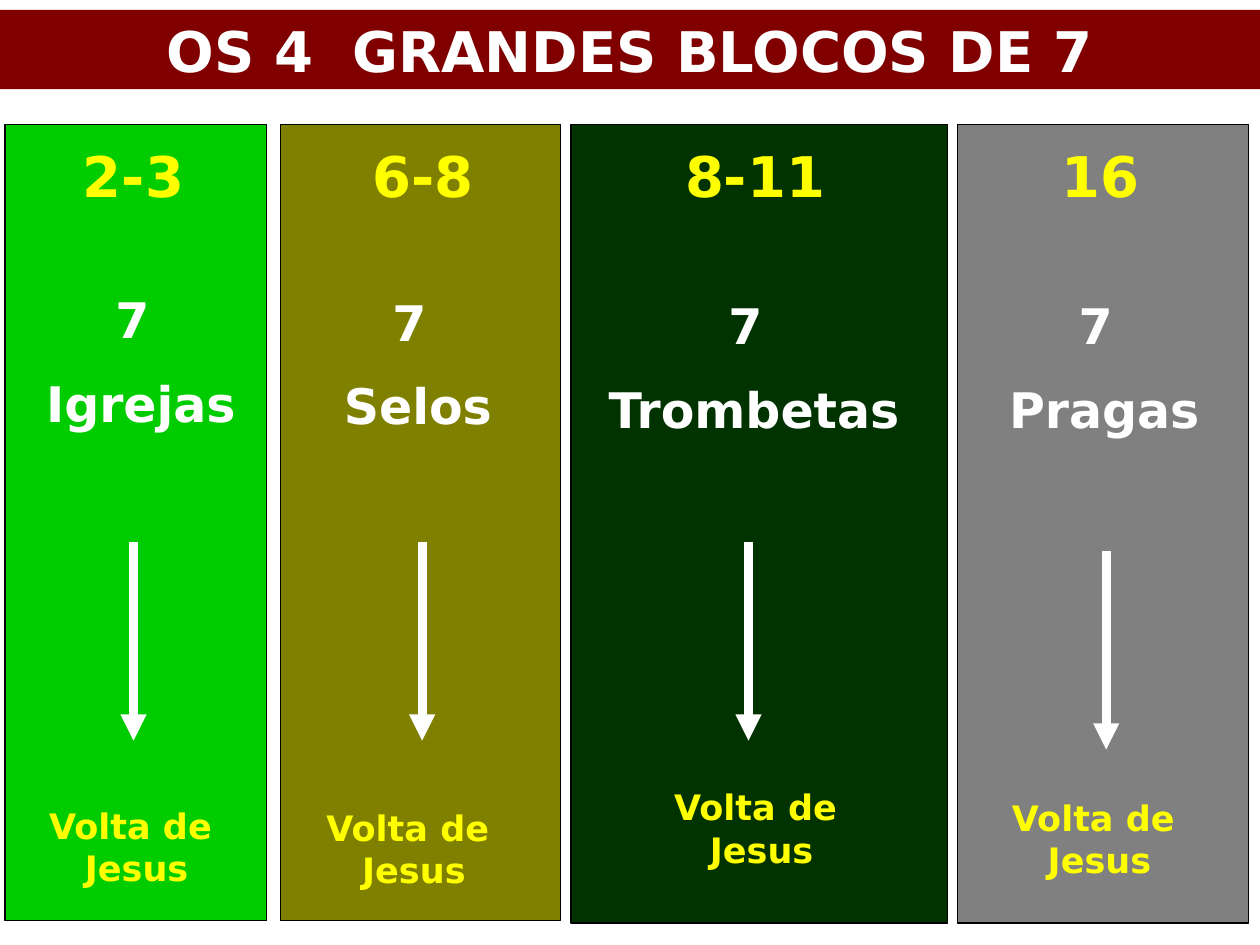
from dataclasses import dataclass

from lxml import etree
from pptx import Presentation
from pptx.dml.color import RGBColor
from pptx.enum.shapes import MSO_CONNECTOR, MSO_SHAPE
from pptx.enum.text import MSO_ANCHOR, MSO_AUTO_SIZE, PP_ALIGN
from pptx.oxml.ns import qn
from pptx.shapes.autoshape import Shape
from pptx.slide import Slide
from pptx.util import Cm, Pt

RECTANGLE = MSO_SHAPE.RECTANGLE
STRAIGHT = MSO_CONNECTOR.STRAIGHT
CENTER = PP_ALIGN.CENTER
TOP = MSO_ANCHOR.TOP
FIT_TEXT = MSO_AUTO_SIZE.SHAPE_TO_FIT_TEXT

FONT = "DejaVu Sans"
MAROON = RGBColor(0x80, 0x00, 0x00)
GREEN = RGBColor(0x00, 0xCC, 0x00)
OLIVE = RGBColor(0x80, 0x80, 0x00)
DARK_GREEN = RGBColor(0x00, 0x33, 0x00)
GRAY = RGBColor(0x80, 0x80, 0x80)
BLACK = RGBColor(0x00, 0x00, 0x00)
WHITE = RGBColor(0xFF, 0xFF, 0xFF)
YELLOW = RGBColor(0xFF, 0xFF, 0x00)

# Measures shared by all blocks, in centimetres
PANEL_TOP = 2.51
CHAPTER_TOP, CHAPTER_HEIGHT = 2.72, 1.6
NAME_HEIGHT = 3.23
ARROW_LENGTH = 4.01
RETURN_WIDTH, RETURN_HEIGHT = 5.31, 1.96


@dataclass(frozen=True)
class Area:
    left: float
    top: float
    width: float
    height: float

    def lengths(self) -> tuple[Cm, Cm, Cm, Cm]:
        return Cm(self.left), Cm(self.top), Cm(self.width), Cm(self.height)


@dataclass(frozen=True)
class Block:
    color: RGBColor
    panel: Area
    chapters: str
    chapters_area: Area
    name: str
    name_area: Area
    arrow_x: float
    arrow_top: float
    return_area: Area


def chapter_area(left: float, width: float) -> Area:
    return Area(left, CHAPTER_TOP, width, CHAPTER_HEIGHT)


def return_area(left: float, top: float) -> Area:
    return Area(left, top, RETURN_WIDTH, RETURN_HEIGHT)


BLOCKS = [
    Block(GREEN, Area(0.1, PANEL_TOP, 5.28, 16.05),
          "2-3", chapter_area(0.69, 4.01),
          "Igrejas", Area(0.3, 5.72, 5.08, NAME_HEIGHT),
          2.69, 10.92, return_area(0.1, 16.1)),
    Block(OLIVE, Area(5.66, PANEL_TOP, 5.64, 16.05),
          "6-8", chapter_area(6.3, 4.45),
          "Selos", Area(6.2, 5.77, 4.45, NAME_HEIGHT),
          8.51, 10.92, return_area(5.69, 16.13)),
    Block(DARK_GREEN, Area(11.51, PANEL_TOP, 7.59, 16.1),
          "8-11", chapter_area(12.9, 4.65),
          "Trombetas", Area(11.3, 5.84, 7.8, NAME_HEIGHT),
          15.09, 10.92, return_area(12.7, 15.72)),
    Block(GRAY, Area(19.3, PANEL_TOP, 5.87, 16.1),
          "16", chapter_area(20.07, 4.24),
          "Pragas", Area(19.3, 5.84, 5.92, NAME_HEIGHT),
          22.3, 11.1, return_area(19.51, 15.93)),
]


def write(box: Shape, lines: list[str], size: int, color: RGBColor) -> None:
    frame = box.text_frame
    frame.word_wrap = True
    frame.auto_size = FIT_TEXT
    frame.vertical_anchor = TOP
    frame.text = "\n".join(lines)
    for para in frame.paragraphs:
        para.alignment = CENTER
        para.font.name = FONT
        para.font.size = Pt(size)
        para.font.bold = True
        para.font.color.rgb = color
        # Space before as half a line
        spacing = para._p.get_or_add_pPr().get_or_add_spcBef()
        etree.SubElement(spacing, qn("a:spcPct"), val="50000")


def add_panel(page: Slide, area: Area, color: RGBColor) -> Shape:
    panel = page.shapes.add_shape(RECTANGLE, *area.lengths())
    panel.shadow.inherit = False
    panel.fill.solid()
    panel.fill.fore_color.rgb = color
    panel.line.fill.background()
    return panel


def add_label(page: Slide, area: Area, lines: list[str], size: int,
              color: RGBColor) -> None:
    write(page.shapes.add_textbox(*area.lengths()), lines, size, color)


def add_arrow(page: Slide, x: float, top: float) -> None:
    arrow = page.shapes.add_connector(
        STRAIGHT, Cm(x), Cm(top), Cm(x), Cm(top + ARROW_LENGTH))
    arrow.line.color.rgb = WHITE
    arrow.line.width = Pt(5)
    etree.SubElement(arrow.line._get_or_add_ln(), qn("a:tailEnd"), type="triangle")
    etree.SubElement(arrow._element.spPr, qn("a:effectLst"))


def add_block(page: Slide, block: Block) -> None:
    panel = add_panel(page, block.panel, block.color)
    panel.line.color.rgb = BLACK
    panel.line.width = Pt(0.75)
    add_label(page, block.chapters_area, [block.chapters], 32, YELLOW)
    add_label(page, block.name_area, ["7 ", block.name], 28, WHITE)
    add_arrow(page, block.arrow_x, block.arrow_top)
    add_label(page, block.return_area, ["Volta de  Jesus"], 20, YELLOW)


def main() -> None:
    deck = Presentation()
    deck.slide_width, deck.slide_height = Cm(25.4), Cm(19.05)
    page = deck.slides.add_slide(deck.slide_layouts[6])

    # Title band
    band = add_panel(page, Area(0, 0.2, 25.4, 1.6), MAROON)
    write(band, ["OS 4  GRANDES BLOCOS DE 7"], 32, WHITE)

    # Four blocks of seven
    for block in BLOCKS:
        add_block(page, block)

    deck.save("out.pptx")


if __name__ == "__main__":
    main()
